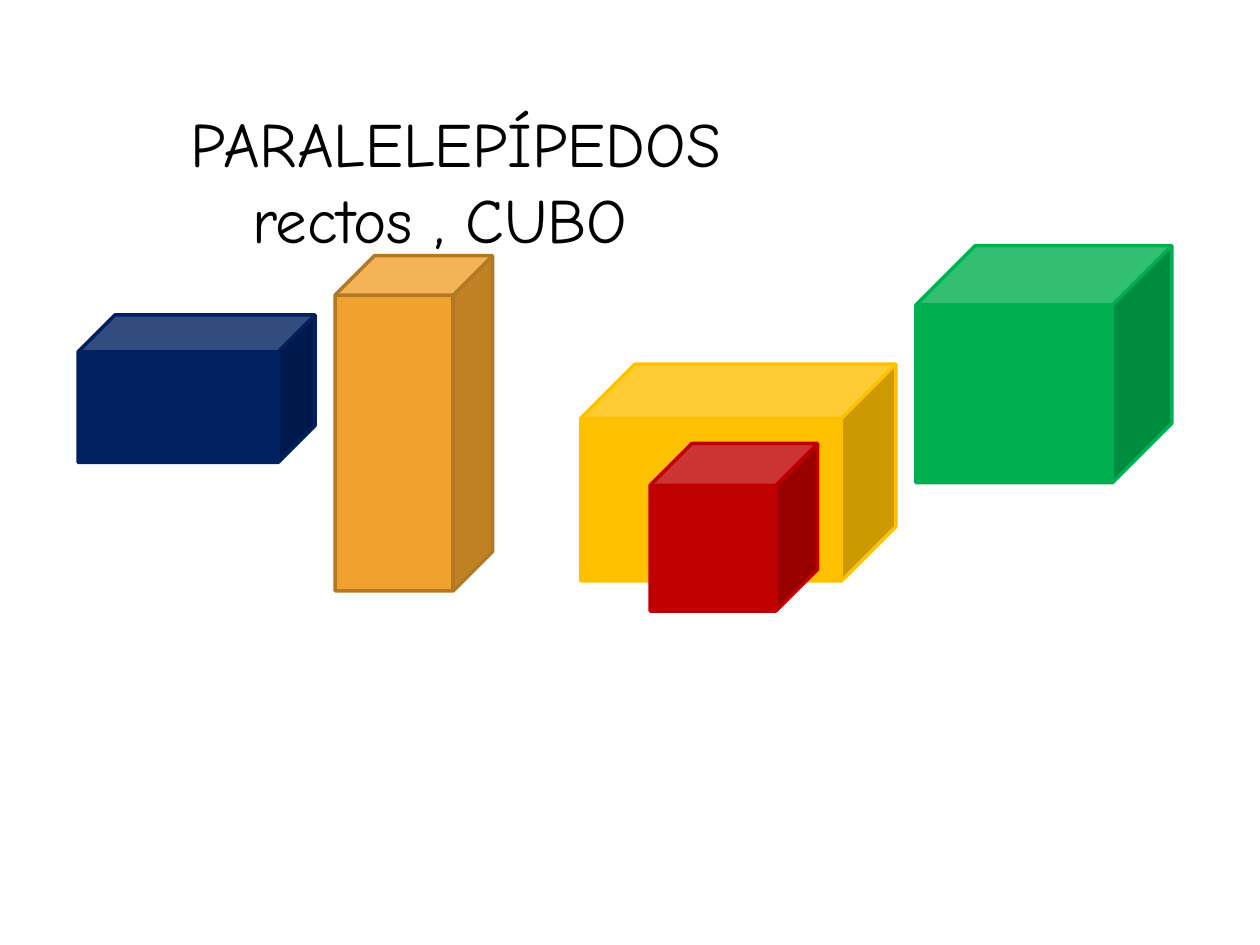
import pptx
import pptx.util
import pptx.dml.color
import pptx.enum.shapes
import pptx.enum.text

Inches, Pt = pptx.util.Inches, pptx.util.Pt
RGB = pptx.dml.color.RGBColor

FONT = "Comic Neue"
BLACK = RGB(0, 0, 0)
NAVY = RGB(0x00, 0x20, 0x60)
GREEN = RGB(0x00, 0xB0, 0x50)
AMBER = RGB(0xF0, 0xA2, 0x2E)
BROWN = RGB(0xB2, 0x78, 0x22)
GOLD = RGB(0xFF, 0xC0, 0x00)
RED = RGB(0xC0, 0x00, 0x00)

# Content: title lines as (text, indent in inches)
TITLE = [("PARALELEPÍPEDOS", 0), ("rectos , CUBO", 0.49)]
TITLE_BOX = (1.41, 0.78, 6.64, 4.95)

# Solids, back to front: (left, top, width, height), fill, line
SOLIDS = [
    ((0.62, 2.5, 1.88, 1.17), NAVY, NAVY),
    ((7.27, 1.95, 2.03, 1.88), GREEN, GREEN),
    ((2.66, 2.03, 1.25, 2.66), AMBER, BROWN),
    ((4.61, 2.89, 2.5, 1.72), GOLD, GOLD),
    ((5.16, 3.52, 1.33, 1.33), RED, RED),
]


def write(frame, lines, size, color, font=FONT):
    """Fill a text frame with left-aligned lines, each with its own indent."""
    frame.word_wrap = True
    frame.auto_size = pptx.enum.text.MSO_AUTO_SIZE.NONE
    frame.vertical_anchor = pptx.enum.text.MSO_ANCHOR.TOP
    for i, (text, indent) in enumerate(lines):
        para = frame.paragraphs[0] if i == 0 else frame.add_paragraph()
        para.alignment = pptx.enum.text.PP_ALIGN.LEFT
        props = para._p.get_or_add_pPr()
        props.set("marL", str(Inches(indent)))
        props.set("indent", "0")
        run = para.add_run()
        run.text = text
        run.font.name = font
        run.font.size = Pt(size)
        run.font.color.rgb = color


def solid(slide, box, fill, line):
    cube = slide.shapes.add_shape(
        pptx.enum.shapes.MSO_SHAPE.CUBE, *map(Inches, box))
    cube.shadow.inherit = False
    cube.fill.solid()
    cube.fill.fore_color.rgb = fill
    cube.line.color.rgb = line
    cube.line.width = Pt(2)


def main():
    deck = pptx.Presentation()
    deck.slide_width, deck.slide_height = Inches(10), Inches(7.5)
    slide = deck.slides.add_slide(deck.slide_layouts[5])

    # Title
    title = slide.shapes.title
    title.left, title.top, title.width, title.height = map(Inches, TITLE_BOX)
    write(title.text_frame, TITLE, size=36, color=BLACK)

    # Solids
    for box, fill, line in SOLIDS:
        solid(slide, box, fill, line)

    deck.save("out.pptx")


if __name__ == "__main__":
    main()
